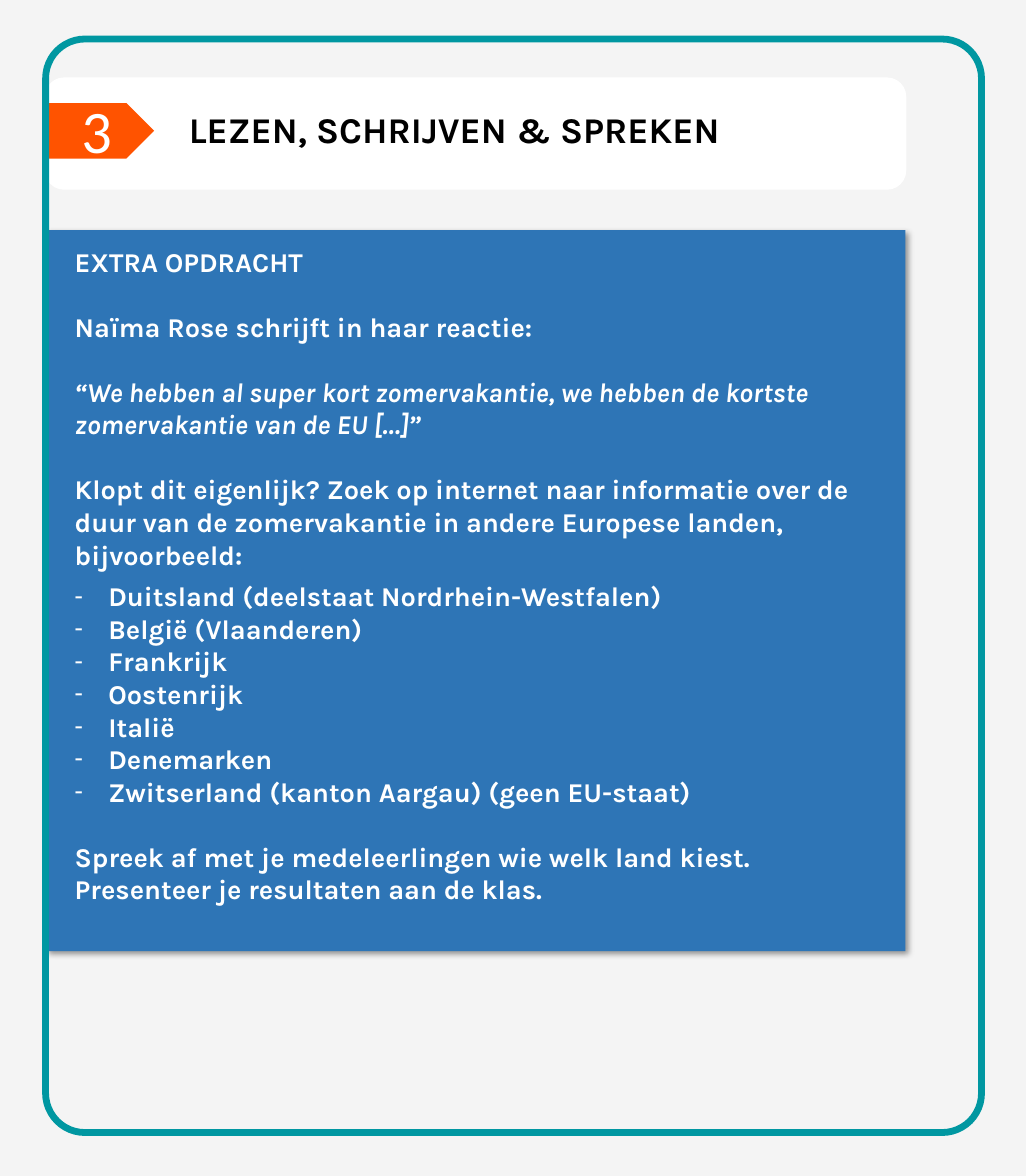
from lxml.etree import SubElement
from pptx import Presentation
from pptx.dml.color import RGBColor
from pptx.enum.shapes import MSO_SHAPE as Shape
from pptx.oxml.ns import qn
from pptx.util import Inches, Pt

TEAL, ORANGE, BLUE, WHITE, BLACK = "0097A1", "FF5300", "2E75B6", "FFFFFF", "000000"
BLANK_LINE = 21.5
COUNTRIES = [
    "Duitsland (deelstaat Nordrhein-Westfalen)",
    "België (Vlaanderen)",
    "Frankrijk",
    "Oostenrijk",
    "Italië",
    "Denemarken",
    "Zwitserland (kanton Aargau) (geen EU-staat)",
]
ASSIGNMENT = [
    ("EXTRA OPDRACHT", {}),
    ("Naïma Rose schrijft in haar reactie:", {"before": BLANK_LINE}),
    ("“We hebben al super kort zomervakantie, we hebben de kortste "
     "zomervakantie van de EU […]”", {"before": BLANK_LINE, "italic": True}),
    ("Klopt dit eigenlijk? Zoek op internet naar informatie over de duur van de "
     "zomervakantie in andere Europese landen, bijvoorbeeld:", {"before": BLANK_LINE}),
    *[(country, {"bullet": True, "before": 0 if index else 6})
      for index, country in enumerate(COUNTRIES)],
    ("Spreek af met je medeleerlingen wie welk land kiest. "
     "Presenteer je resultaten aan de klas.", {"before": BLANK_LINE}),
]


def color(value):
    return RGBColor.from_string(value)


def add_panel(slide, kind, box, fill=None, line=None, width=1):
    shape = slide.shapes.add_shape(kind, *map(Inches, box))
    shape.shadow.inherit = False
    if fill:
        shape.fill.solid()
        shape.fill.fore_color.rgb = color(fill)
    else:
        shape.fill.background()
    if line:
        shape.line.color.rgb = color(line)
        shape.line.width = Pt(width)
    else:
        shape.line.fill.background()
    return shape


def add_shadow(shape):
    effects = shape._element.spPr.find(qn("a:effectLst"))
    shadow = SubElement(effects, qn("a:outerShdw"), blurRad=str(Pt(4)), dist=str(Pt(3)),
                        dir="2700000", algn="tl", rotWithShape="0")
    tone = SubElement(shadow, qn("a:srgbClr"), val=BLACK)
    SubElement(tone, qn("a:alpha"), val="40000")


def add_text_box(slide, box, inset=0.1):
    frame = slide.shapes.add_textbox(*map(Inches, box)).text_frame
    frame.word_wrap = True
    frame.margin_left = Inches(inset)
    return frame


def write(paragraph, text, size=18, font="Karla", fill=WHITE, bold=True,
          italic=False, before=0, bullet=False):
    if bullet:
        properties = paragraph._p.get_or_add_pPr()
        properties.set("marL", str(Inches(0.31)))
        properties.set("indent", str(Inches(-0.31)))
        SubElement(properties, qn("a:buFont"), typeface="Calibri")
        SubElement(properties, qn("a:buChar"), char="-")
    if before:
        paragraph.space_before = Pt(before)
    run = paragraph.add_run()
    run.text = text
    run.font.name, run.font.size = font, Pt(size)
    run.font.bold, run.font.italic = bold, italic
    run.font.color.rgb = color(fill)


def add_assignment(slide, left, top, width, height):
    add_shadow(add_panel(slide, Shape.RECTANGLE, (left, top, width, height), BLUE))
    frame = add_text_box(slide, (left + 0.16, top + 0.09, width - 0.34, height - 0.31))
    for index, (text, style) in enumerate(ASSIGNMENT):
        paragraph = frame.add_paragraph() if index else frame.paragraphs[0]
        write(paragraph, text, **style)


def add_heading(slide, left, top, width, height):
    add_panel(slide, Shape.ROUNDED_RECTANGLE, (left, top, width, height), WHITE, WHITE)
    add_panel(slide, Shape.PENTAGON, (left, top + 0.23, 1, 0.51), ORANGE)
    title = add_text_box(slide, (left + 1.22, top + 0.22, 6.21, 0.5))
    write(title.paragraphs[0], "LEZEN, SCHRIJVEN & SPREKEN", size=24, fill=BLACK)


def add_number(slide, left, top, width, height):
    number = add_text_box(slide, (left, top, width, height), inset=0.35)
    write(number.paragraphs[0], "3", size=40, font="Calibri", bold=False)


def add_border(slide, *box):
    border = add_panel(slide, Shape.ROUNDED_RECTANGLE, box, line=TEAL, width=4.5)
    border.adjustments[0] = 0.042


def main():
    presentation = Presentation()
    presentation.slide_width = Inches(9.45)
    presentation.slide_height = Inches(10.83)
    slide = presentation.slides.add_slide(presentation.slide_layouts[6])
    slide.background.fill.solid()
    slide.background.fill.fore_color.rgb = color("F4F4F4")
    add_assignment(slide, 0.43, 2.12, 7.91, 6.64)
    add_heading(slide, 0.42, 0.72, 7.92, 1.02)
    add_border(slide, 0.42, 0.36, 8.62, 10.07)
    add_number(slide, 0.4, 0.81, 1.02, 0.77)
    presentation.save("out.pptx")


if __name__ == "__main__":
    main()
